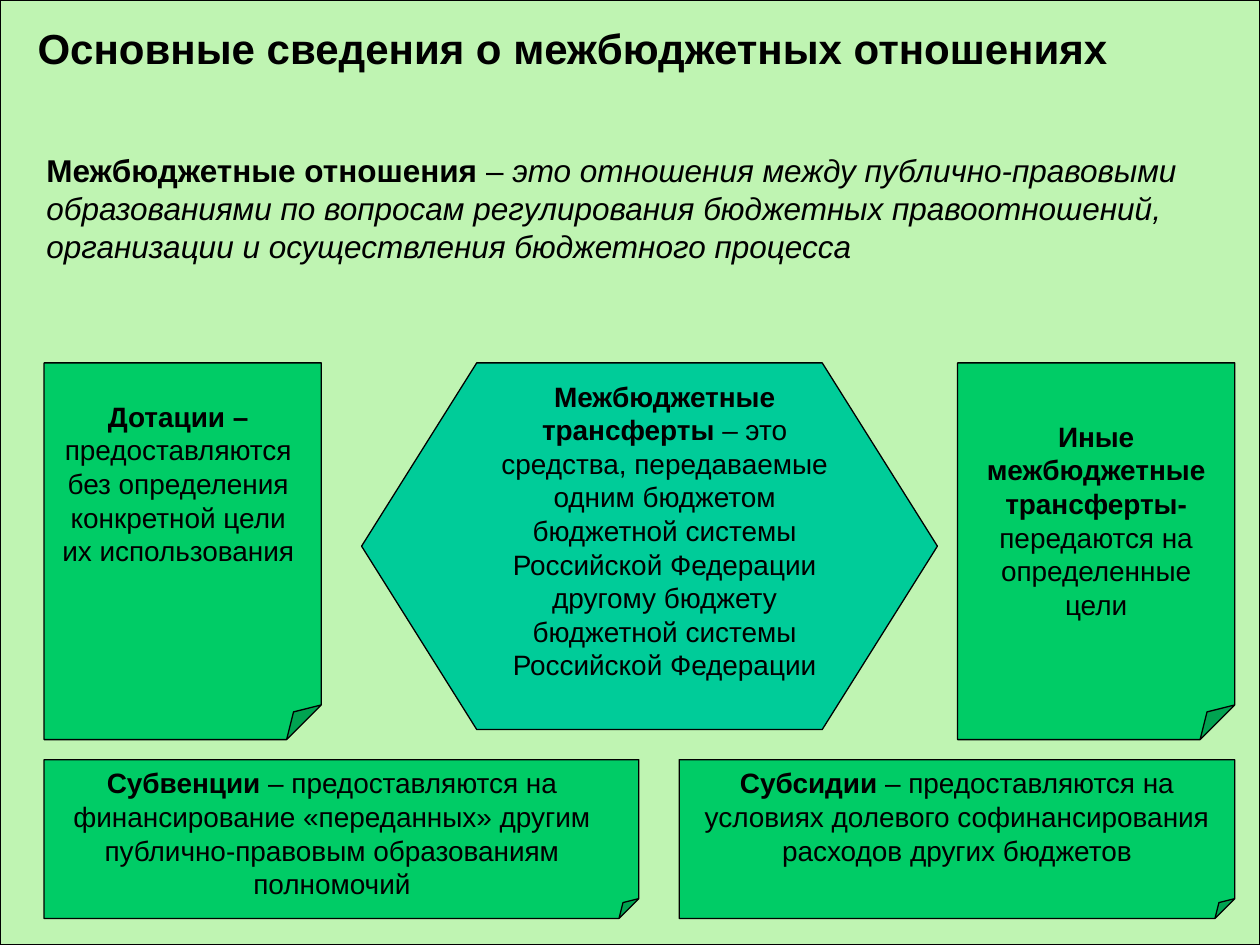
from lxml import etree
from pptx import Presentation
from pptx.dml.color import RGBColor
from pptx.enum.shapes import MSO_SHAPE
from pptx.enum.text import MSO_ANCHOR, MSO_AUTO_SIZE, PP_ALIGN
from pptx.oxml.ns import qn
from pptx.util import Inches, Pt

BLACK = RGBColor(0x00, 0x00, 0x00)
PALE_GREEN = RGBColor(0xBF, 0xF4, 0xB2)
GREEN = RGBColor(0x00, 0xCC, 0x66)
TEAL = RGBColor(0x00, 0xCC, 0x99)


class SlideBuilder:
    font = "Arial"
    line_width = Pt(0.75)

    def __init__(self, slide):
        self.s = slide

    def shape(self, kind, box, fill):
        sp = self.s.shapes.add_shape(kind, *map(Inches, box))
        sp.shadow.inherit = False
        sp.fill.solid()
        sp.fill.fore_color.rgb = fill
        sp.line.color.rgb = BLACK
        sp.line.width = self.line_width
        return sp

    def note(self, box):
        sp = self.shape(MSO_SHAPE.FOLDED_CORNER, box, GREEN)
        # Fold size: one eighth of the shorter side
        geometry = next(sp.element.iter(qn("a:prstGeom")))
        for guides in geometry.findall(qn("a:avLst")):
            geometry.remove(guides)
        guides = etree.SubElement(geometry, qn("a:avLst"))
        etree.SubElement(guides, qn("a:gd"), name="adj", fmla="val 12500")

    def text(self, box, runs, size=16, align=PP_ALIGN.CENTER):
        """Each run is (text, bold, italic)."""
        tf = self.s.shapes.add_textbox(*map(Inches, box)).text_frame
        tf.word_wrap = True
        tf.auto_size = MSO_AUTO_SIZE.SHAPE_TO_FIT_TEXT
        tf.vertical_anchor = MSO_ANCHOR.TOP
        p = tf.paragraphs[0]
        p.alignment = align
        for text, bold, italic in runs:
            r = p.add_run()
            r.text = text
            r.font.name = self.font
            r.font.size = Pt(size)
            r.font.bold = bold
            r.font.italic = italic
            r.font.color.rgb = BLACK

    def term(self, box, name, meaning):
        self.text(box, [(name, True, False), (meaning, False, False)])


prs = Presentation()
prs.slide_width, prs.slide_height = Inches(10), Inches(7.5)
b = SlideBuilder(prs.slides.add_slide(prs.slide_layouts[6]))

# Framed background
b.shape(MSO_SHAPE.RECTANGLE, (0, 0, 10, 7.5), PALE_GREEN)

# Central hexagon and the four kinds of transfers around it
LEFT, RIGHT = 0.35, 9.8
UPPER, LOWER = 2.88, 6.03
b.shape(MSO_SHAPE.FLOWCHART_PREPARATION, (2.87, UPPER, 4.57, 2.91), TEAL)
for top, height, left_width, right_width in (
    (UPPER, 2.99, 2.2, 2.2),
    (LOWER, 1.26, 4.72, 4.41),
):
    b.note((LEFT, top, left_width, height))
    b.note((RIGHT - right_width, top, right_width, height))

# Title and definition
b.text((0.2, 0.13, 9.53, 0.5),
       [("Основные сведения о межбюджетных отношениях", True, False)],
       size=24, align=PP_ALIGN.LEFT)
b.text((0.27, 1.15, 9.53, 1),
       [("Межбюджетные отношения", True, False),
        (" – ", False, False),
        ("это отношения между публично-правовыми образованиями по вопросам "
         "регулирования бюджетных правоотношений, организации и "
         "осуществления бюджетного процесса", False, True)],
       size=18, align=PP_ALIGN.LEFT)

# Terms with their meanings
TERMS = (
    ((3.74, 2.96, 3.07, 2.51), "Межбюджетные трансферты",
     " – это средства, передаваемые одним бюджетом бюджетной системы "
     "Российской Федерации другому бюджету бюджетной системы "
     "Российской Федерации"),
    ((7.6, 3.28, 2.2, 1.7), "Иные межбюджетные трансферты-",
     " передаются на определенные цели"),
    ((LEFT, 3.12, 2.13, 1.44), "Дотации –",
     " предоставляются без определения конкретной цели их использования"),
    ((LEFT, LOWER, 4.57, 1.17), "Субвенции",
     " – предоставляются на финансирование «переданных» другим "
     "публично-правовым образованиям полномочий"),
    ((5.47, LOWER, 4.25, 0.9), "Субсидии",
     " – предоставляются на условиях долевого софинансирования "
     "расходов других бюджетов"),
)
for box, name, meaning in TERMS:
    b.term(box, name, meaning)

prs.save("out.pptx")
